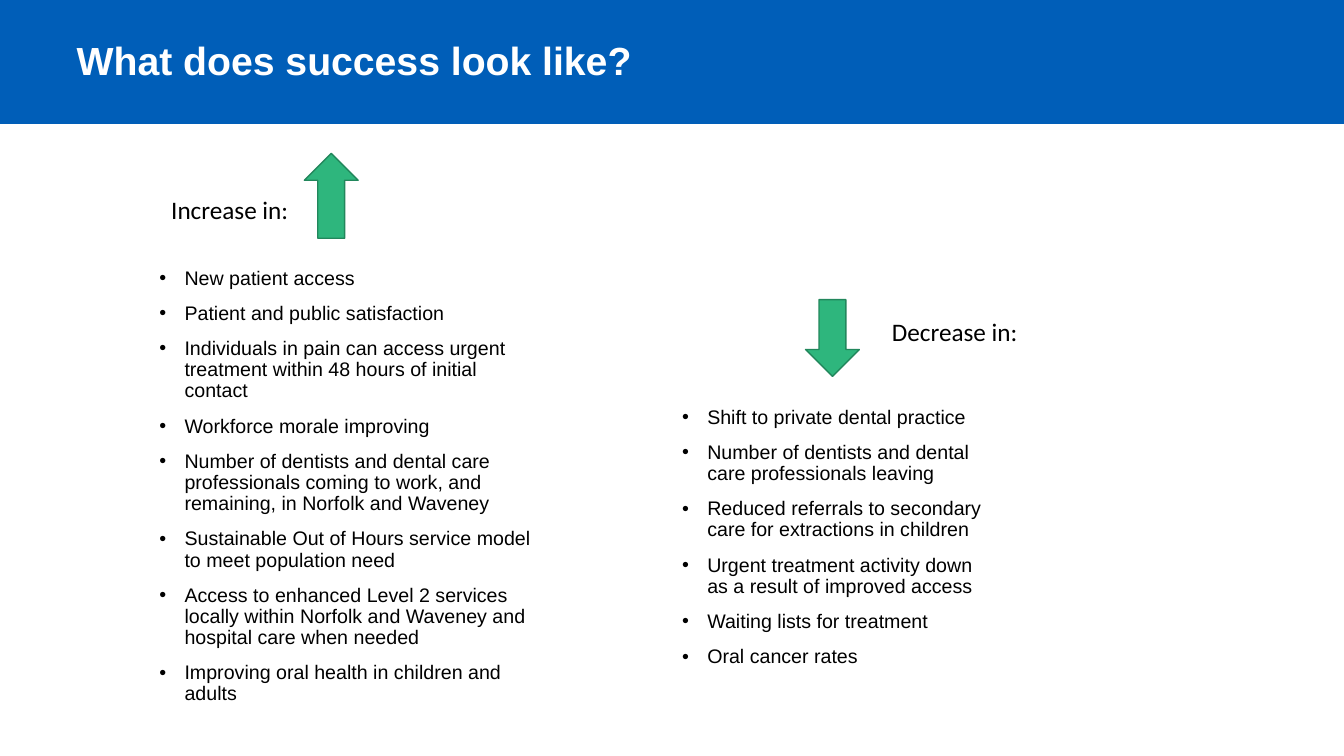
"""Build the slide that shows what success looks like for dental care."""
import dataclasses

import lxml.etree
import pptx
import pptx.dml.color
import pptx.enum.shapes
import pptx.enum.text
import pptx.oxml.ns
import pptx.util

Pt = pptx.util.Pt
RGBColor = pptx.dml.color.RGBColor
Shape = pptx.enum.shapes.MSO_SHAPE
Anchor = pptx.enum.text.MSO_ANCHOR

BLUE = RGBColor(0x00, 0x5E, 0xB8)
GREEN = RGBColor(0x2E, 0xB6, 0x7D)
DARK_GREEN = RGBColor(0x22, 0x87, 0x5C)
BLACK = RGBColor(0x00, 0x00, 0x00)
WHITE = RGBColor(0xFF, 0xFF, 0xFF)

TWO_CONTENT_LAYOUT = 3
BULLET_INDENT = Pt(18)


@dataclasses.dataclass(frozen=True)
class Area:
    left: float
    top: float
    width: float
    height: float

    def lengths(self) -> tuple:
        return tuple(Pt(value) for value in dataclasses.astuple(self))


@dataclasses.dataclass(frozen=True)
class Trend:
    heading: str
    heading_area: Area
    arrow_area: Area
    arrow_rotation: int
    list_area: Area
    outcomes: tuple[str, ...]


TRENDS = (
    Trend(
        "Increase in:",
        Area(115.2, 135.4, 121, 29),
        Area(217.4, 109.6, 38.4, 60.6),
        0,
        Area(106.6, 187.9, 283.7, 305.3),
        (
            "New patient access",
            "Patient and public satisfaction",
            "Individuals in pain can access urgent treatment within 48 hours of initial contact",
            "Workforce morale improving",
            "Number of dentists and dental care professionals coming to work, "
            "and remaining, in Norfolk and Waveney",
            "Sustainable Out of Hours service model to meet population need",
            "Access to enhanced Level 2 services locally within Norfolk and Waveney "
            "and hospital care when needed",
            "Improving oral health in children and adults",
        ),
    ),
    Trend(
        "Decrease in:",
        Area(630, 222.5, 121, 29),
        Area(575.4, 214, 38.4, 54.8),
        180,
        Area(480, 287.3, 229, 252.7),
        (
            "Shift to private dental practice",
            "Number of dentists and dental care professionals leaving",
            "Reduced referrals to secondary care for extractions in children",
            "Urgent treatment activity down as a result of improved access",
            "Waiting lists for treatment",
            "Oral cancer rates",
        ),
    ),
)


def place(box, area: Area) -> None:
    box.left, box.top, box.width, box.height = area.lengths()


def format_font(paragraph, name: str, size: float, color: RGBColor, bold: bool = False) -> None:
    for span in paragraph.runs:
        span.font.name = name
        span.font.size = Pt(size)
        span.font.bold = bold
        span.font.color.rgb = color


def add_block(page, kind, area: Area, fill: RGBColor):
    block = page.shapes.add_shape(kind, *area.lengths())
    block.shadow.inherit = False
    block.fill.solid()
    block.fill.fore_color.rgb = fill
    return block


def add_band(page) -> None:
    band = add_block(page, Shape.RECTANGLE, Area(0, 0, 960, 88.5), BLUE)
    band.line.fill.background()
    page.shapes._spTree.insert(2, band._element)


def fill_title(title) -> None:
    place(title, Area(47.6, 10.8, 880.6, 68.4))
    frame = title.text_frame
    frame.text = "What does success look like?"
    frame.auto_size = pptx.enum.text.MSO_AUTO_SIZE.NONE
    frame.vertical_anchor = Anchor.MIDDLE
    heading = frame.paragraphs[0]
    heading.alignment = pptx.enum.text.PP_ALIGN.LEFT
    heading.line_spacing = 0.9
    format_font(heading, "Arial", 28, WHITE, bold=True)


def fill_list(box, trend: Trend) -> None:
    place(box, trend.list_area)
    frame = box.text_frame
    frame.text = "\n".join(trend.outcomes)
    frame.auto_size = pptx.enum.text.MSO_AUTO_SIZE.NONE
    frame.vertical_anchor = Anchor.TOP
    for position, paragraph in enumerate(frame.paragraphs):
        properties = paragraph._p.get_or_add_pPr()
        properties.set("marL", str(BULLET_INDENT))
        properties.set("indent", str(-BULLET_INDENT))
        bullet = lxml.etree.SubElement(properties, pptx.oxml.ns.qn("a:buChar"))
        bullet.set("char", "•")
        paragraph.line_spacing = 0.9
        paragraph.space_before = Pt(10 if position else 0)
        format_font(paragraph, "Arial", 14, BLACK)


def add_heading(page, trend: Trend) -> None:
    box = page.shapes.add_textbox(*trend.heading_area.lengths())
    frame = box.text_frame
    frame.word_wrap = True
    frame.text = trend.heading
    format_font(frame.paragraphs[0], "Calibri", 18, BLACK)


def add_arrow(page, trend: Trend) -> None:
    arrow = add_block(page, Shape.UP_ARROW, trend.arrow_area, GREEN)
    arrow.rotation = trend.arrow_rotation
    arrow.line.color.rgb = DARK_GREEN
    arrow.line.width = Pt(1)


def main() -> None:
    deck = pptx.Presentation()
    deck.slide_width, deck.slide_height = Pt(960), Pt(540)
    page = deck.slides.add_slide(deck.slide_layouts[TWO_CONTENT_LAYOUT])
    title, *lists = page.placeholders
    add_band(page)
    fill_title(title)
    for box, trend in zip(lists, TRENDS):
        fill_list(box, trend)
        add_arrow(page, trend)
        add_heading(page, trend)
    deck.save("out.pptx")


if __name__ == "__main__":
    main()
